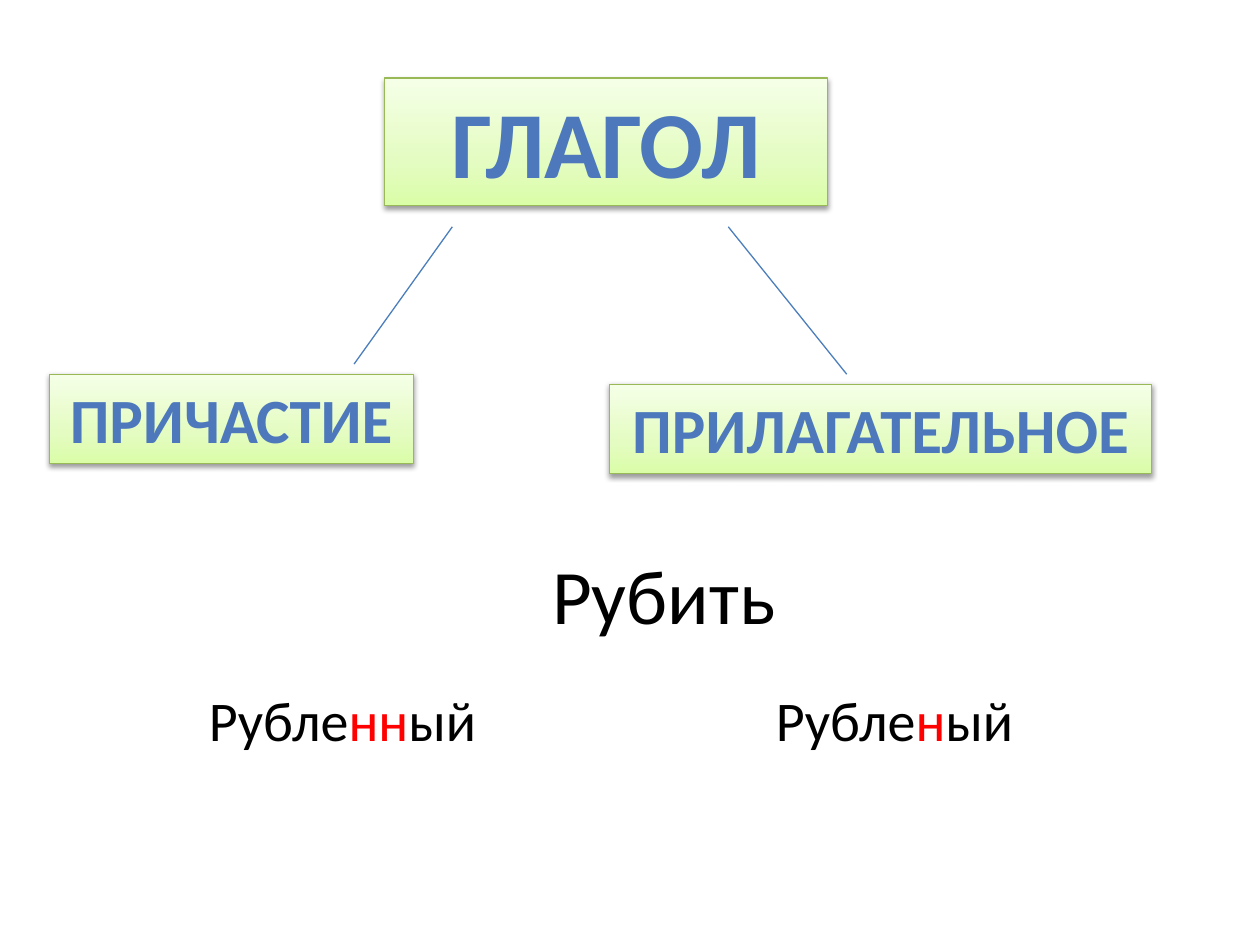
from dataclasses import dataclass

import pptx
import pptx.dml.color
import pptx.enum.shapes
import pptx.enum.text
import pptx.oxml
import pptx.oxml.ns
import pptx.util
from lxml import etree

Inches = pptx.util.Inches
Pt = pptx.util.Pt
qn = pptx.oxml.ns.qn
RGB = pptx.dml.color.RGBColor.from_string
Align = pptx.enum.text.PP_ALIGN
Anchor = pptx.enum.text.MSO_ANCHOR


@dataclass(frozen=True)
class Theme:
    font: str = "Calibri"
    background: str = "FFFFFF"
    box_stops: tuple = ((0, "DAFDA7"), (35, "E4FCC2"), (100, "F5FFE7"))
    box_line: str = "98B955"
    box_text: str = "4D79BC"
    branch: str = "4B7EBC"
    text: str = "000000"
    accent: str = "FF0000"
    line_width: float = 0.75
    head_size: int = 54
    title_size: int = 44
    box_size: int = 36
    example_size: int = 32


THEME = Theme()


def set_font(font, size, color, bold=False):
    font.name = THEME.font
    font.size = Pt(size)
    font.bold = bold
    font.color.rgb = RGB(color)


def fill_gradient(sp, stops):
    sp.fill.gradient()
    sp.fill.gradient_angle = 90
    gs_list = sp._element.spPr.find(".//" + qn("a:gsLst"))
    for gs in list(gs_list):
        gs_list.remove(gs)
    for position, color in stops:
        gs = etree.SubElement(gs_list, qn("a:gs"), pos=str(position * 1000))
        etree.SubElement(gs, qn("a:srgbClr"), val=color)


def add_shadow(sp):
    sp.shadow.inherit = False
    effects = sp._element.spPr.find(qn("a:effectLst"))
    shadow = etree.SubElement(
        effects, qn("a:outerShdw"), blurRad=str(Pt(3.1)), dist=str(Pt(1.6)),
        dir="5400000", rotWithShape="0")
    color = etree.SubElement(shadow, qn("a:srgbClr"), val="000000")
    etree.SubElement(color, qn("a:alpha"), val="38000")


def add_word_box(slide, box, word, size):
    sp = slide.shapes.add_shape(
        pptx.enum.shapes.MSO_SHAPE.RECTANGLE, *map(Inches, box))
    fill_gradient(sp, THEME.box_stops)
    sp.line.color.rgb = RGB(THEME.box_line)
    sp.line.width = Pt(THEME.line_width)
    add_shadow(sp)
    tf = sp.text_frame
    tf.word_wrap = False
    tf.vertical_anchor = Anchor.TOP
    p = tf.paragraphs[0]
    p.text = word
    p.alignment = Align.CENTER
    set_font(p.font, size, THEME.box_text, bold=True)


def add_branch(slide, start, end):
    line = slide.shapes.add_connector(
        pptx.enum.shapes.MSO_CONNECTOR.STRAIGHT, *map(Inches, start + end))
    line.line.color.rgb = RGB(THEME.branch)
    line.line.width = Pt(THEME.line_width)
    etree.SubElement(line._element.spPr, qn("a:effectLst"))


def add_text_box(slide, box, anchor):
    tf = slide.shapes.add_textbox(*map(Inches, box)).text_frame
    tf.word_wrap = True
    tf.vertical_anchor = anchor
    return tf.paragraphs[0]


def add_title(slide, box, text):
    p = add_text_box(slide, box, Anchor.MIDDLE)
    p.text = text
    p.alignment = Align.CENTER
    set_font(p.font, THEME.title_size, THEME.text)


def add_examples(slide, box, parts, tab):
    p = add_text_box(slide, box, Anchor.TOP)
    tabs = etree.SubElement(p._p.get_or_add_pPr(), qn("a:tabLst"))
    etree.SubElement(tabs, qn("a:tab"), pos=str(Inches(tab)), algn="l")
    for text, color in parts:
        r = p.add_run()
        r.text = text
        set_font(r.font, THEME.example_size, color)


def build_slide(prs):
    slide = prs.slides.add_slide(prs.slide_layouts[6])
    slide.background.fill.solid()
    slide.background.fill.fore_color.rgb = RGB(THEME.background)
    add_word_box(slide, (3.05, 0.62, 3.52, 1.01), "ГЛАГОЛ", THEME.head_size)
    add_word_box(slide, (0.39, 2.97, 2.89, 0.71), "ПРИЧАСТИЕ", THEME.box_size)
    add_word_box(slide, (4.84, 3.05, 4.3, 0.71), "ПРИЛАГАТЕЛЬНОЕ", THEME.box_size)
    add_branch(slide, (5.78, 1.8), (6.72, 2.97))
    add_branch(slide, (3.59, 1.8), (2.81, 2.89))
    add_title(slide, (1.02, 3.91, 8.5, 1.61), "Рубить")
    add_examples(slide, (1.56, 5.39, 7, 1.92), (
        ("Рубле", THEME.text), ("нн", THEME.accent), ("ый\tРубле", THEME.text),
        ("н", THEME.accent), ("ый", THEME.text)), tab=4.5)


def main():
    prs = pptx.Presentation()
    prs.slide_width = Inches(10)
    prs.slide_height = Inches(7.5)
    build_slide(prs)
    prs.save("out.pptx")


if __name__ == "__main__":
    main()
